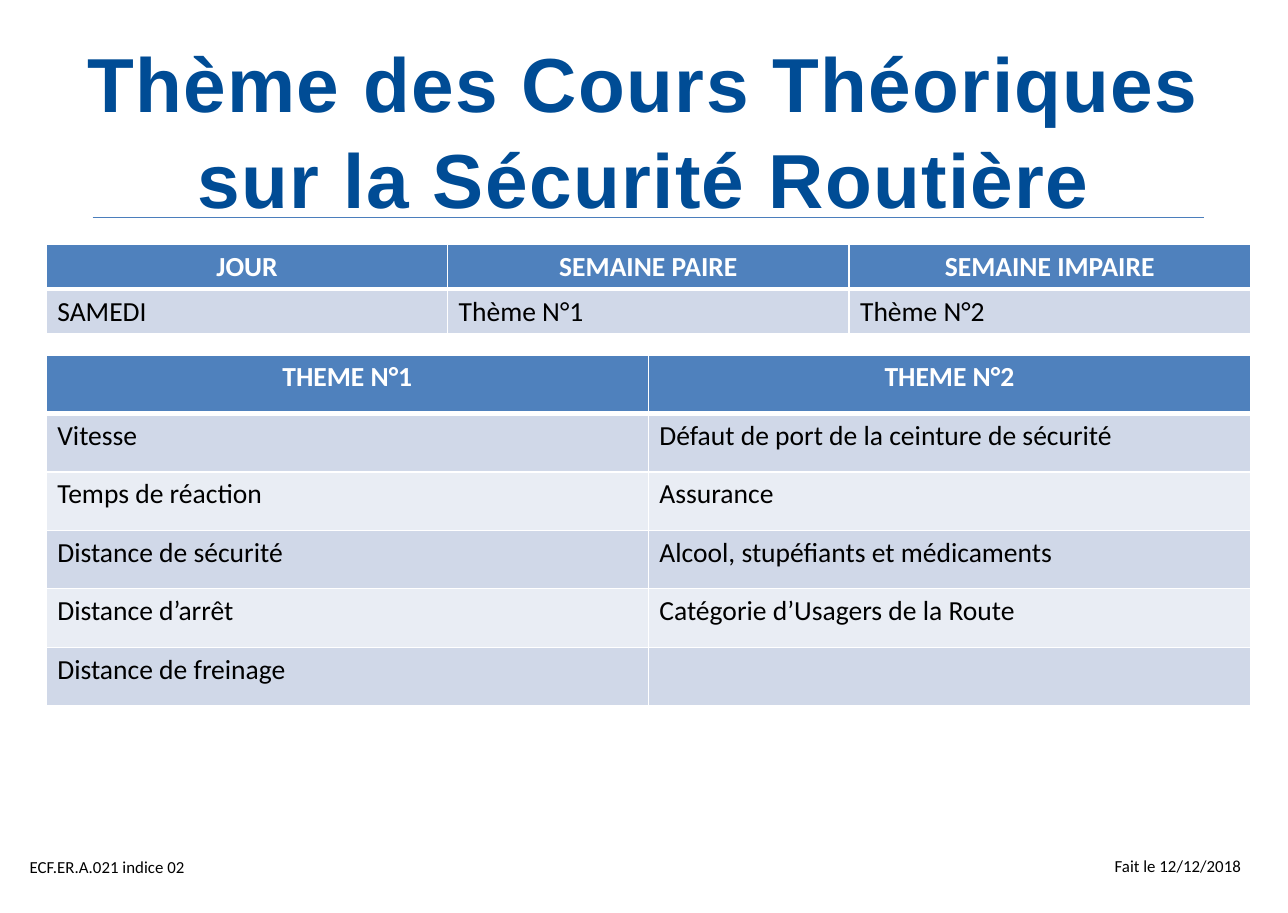
from dataclasses import dataclass

from lxml import etree
from pptx import Presentation
from pptx import util as u
from pptx.dml import color
from pptx.enum import shapes, text
from pptx.oxml import ns

BLUE, WHITE, BLACK = "4F81BD", "FFFFFF", "000000"
BANDS = ("D0D8E8", "E9EDF4")
LEFT, WIDTH = 0.42, 10.92


@dataclass
class Grid:
    top: float
    row_height: float
    rows: list[tuple[str, ...]]


@dataclass
class Label:
    left: float
    top: float
    width: float
    text: str


GRIDS = [
    Grid(2.22, 0.405, [
        ("JOUR", "SEMAINE PAIRE", "SEMAINE IMPAIRE"),
        ("SAMEDI", "Thème N°1", "Thème N°2"),
    ]),
    Grid(3.22, 0.53, [
        ("THEME N°1", "THEME N°2"),
        ("Vitesse", "Défaut de port de la ceinture de sécurité"),
        ("Temps de réaction", "Assurance"),
        ("Distance de sécurité", "Alcool, stupéfiants et médicaments"),
        ("Distance d’arrêt", "Catégorie d’Usagers de la Route"),
        ("Distance de freinage", ""),
    ]),
]
FOOTERS = [
    Label(0.17, 7.72, 1.63, "ECF.ER.A.021 indice 02"),
    Label(10.01, 7.71, 1.36, "Fait le 12/12/2018"),
]


def rgb(value: str) -> color.RGBColor:
    return color.RGBColor.from_string(value)


def style(font, name: str, size: float, hex_color: str, bold: bool = False) -> None:
    font.name, font.size, font.bold = name, u.Pt(size), bold
    font.color.rgb = rgb(hex_color)


def add_borders(cell, bottom: float) -> None:
    tc_pr = cell._tc.get_or_add_tcPr()
    edges = {"lnL": 1, "lnR": 1, "lnT": 1, "lnB": bottom}
    for i, (tag, width) in enumerate(edges.items()):
        ln = etree.Element(ns.qn(f"a:{tag}"), w=str(u.Pt(width)))
        fill = etree.SubElement(ln, ns.qn("a:solidFill"))
        etree.SubElement(fill, ns.qn("a:srgbClr"), val=WHITE)
        tc_pr.insert(i, ln)


def add_title(s) -> None:
    sp = s.shapes.add_textbox(*map(u.Inches, (0.34, 0.28, 11, 1.21)))
    tf = sp.text_frame
    tf.word_wrap = True
    tf.margin_left = tf.margin_right = tf.margin_top = tf.margin_bottom = 0
    tf.text = "Thème des Cours Théoriques sur la Sécurité Routière"
    p = tf.paragraphs[0]
    p.alignment = text.PP_ALIGN.CENTER
    p.line_spacing = 1.05
    r = p.runs[0]
    style(r.font, "Arial", 50, "004C95", True)
    r._r.get_or_add_rPr().set("spc", "90")


def add_rule(s) -> None:
    line = s.shapes.add_connector(
        shapes.MSO_CONNECTOR.STRAIGHT, *map(u.Inches, (0.84, 1.97, 10.92, 1.97)))
    line.line.color.rgb = rgb("4B7EBC")
    line.line.width = u.Pt(0.75)
    etree.SubElement(line._element.spPr, ns.qn("a:effectLst"))


def add_footer(s, label: Label) -> None:
    sp = s.shapes.add_textbox(*map(u.Inches, (label.left, label.top, label.width, 0.29)))
    tf = sp.text_frame
    tf.word_wrap = False
    tf.auto_size = text.MSO_AUTO_SIZE.SHAPE_TO_FIT_TEXT
    tf.text = label.text
    style(tf.paragraphs[0].runs[0].font, "Calibri", 11, BLACK)


def add_grid(s, grid: Grid) -> None:
    n_rows, n_cols = len(grid.rows), len(grid.rows[0])
    table = s.shapes.add_table(
        n_rows, n_cols, u.Inches(LEFT), u.Inches(grid.top),
        u.Inches(WIDTH), u.Inches(grid.row_height * n_rows)).table
    for col in table.columns:
        col.width = u.Inches(WIDTH / n_cols)
    for i, values in enumerate(grid.rows):
        header = i == 0
        table.rows[i].height = u.Inches(grid.row_height)
        for j, value in enumerate(values):
            cell = table.cell(i, j)
            cell.fill.solid()
            cell.fill.fore_color.rgb = rgb(BLUE if header else BANDS[(i - 1) % 2])
            add_borders(cell, 3 if header else 1)
            cell.text_frame.text = value
            p = cell.text_frame.paragraphs[0]
            if header:
                p.alignment = text.PP_ALIGN.CENTER
            for r in p.runs:
                style(r.font, "Calibri", 18, WHITE if header else BLACK, header)


def main() -> None:
    prs = Presentation()
    prs.slide_width, prs.slide_height = u.Inches(11.68), u.Inches(8.28)
    s = prs.slides.add_slide(prs.slide_layouts[6])
    add_title(s)
    add_rule(s)
    for label in FOOTERS:
        add_footer(s, label)
    for grid in GRIDS:
        add_grid(s, grid)
    prs.save("out.pptx")


if __name__ == "__main__":
    main()
